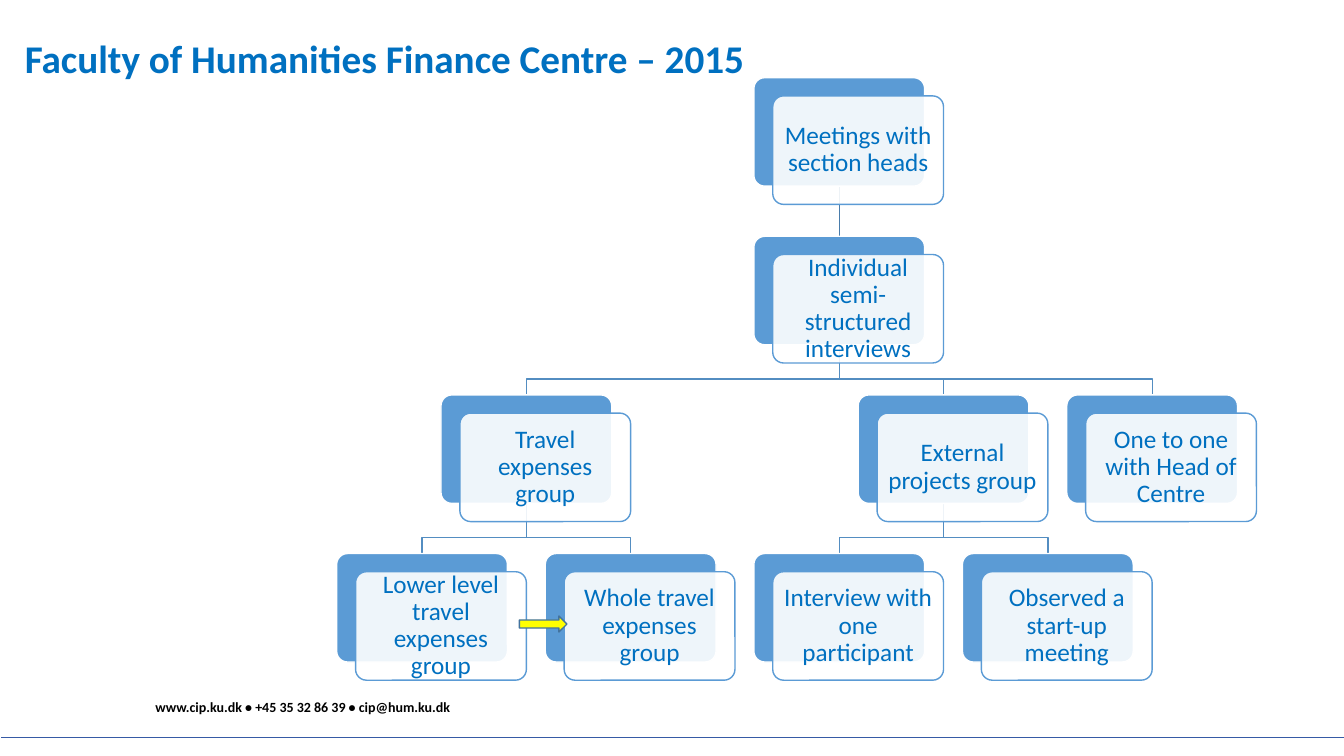
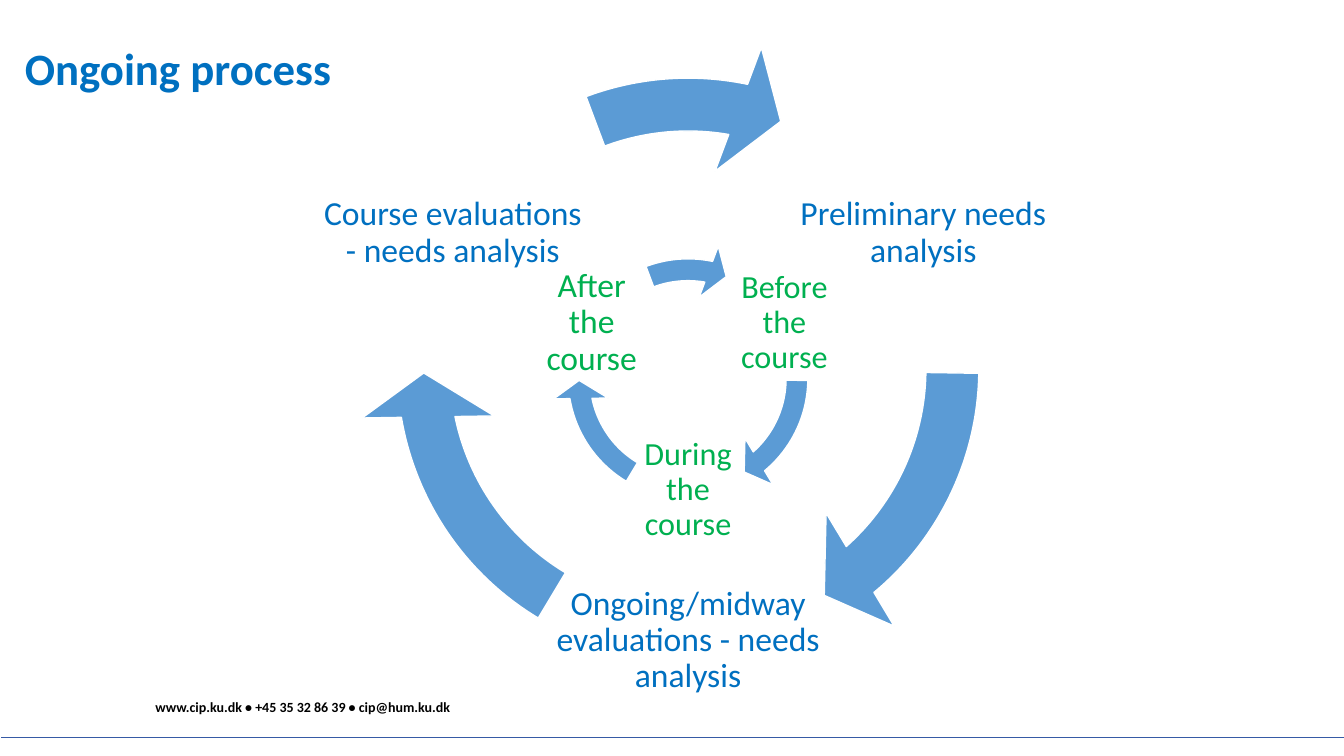
import math

import pptx
import pptx.util
from lxml import etree
from pptx.dml.color import RGBColor
from pptx.enum.shapes import MSO_CONNECTOR, MSO_SHAPE
from pptx.enum.text import MSO_ANCHOR, MSO_AUTO_SIZE, PP_ALIGN
from pptx.oxml.ns import qn

Pt = pptx.util.Pt
FONT = "Calibri"
COLORS = {
    "text": "0070C0", "phase": "00B050", "footer": "000000", "rule": "365AA5",
    "box": "5B9BD5", "white": "FFFFFF", "trunk": "497CAB", "branch": "538DC1",
    "arrow": "FFFF00", "arrow_line": "43739E",
}


def set_text(shape, text, size, color, margin, bold=False,
             align=PP_ALIGN.CENTER, anchor=MSO_ANCHOR.MIDDLE, spacing=0.9):
    tf = shape.text_frame
    tf.text = text
    tf.word_wrap = True
    tf.auto_size = MSO_AUTO_SIZE.NONE
    tf.vertical_anchor = anchor
    tf.margin_left = tf.margin_right = tf.margin_top = tf.margin_bottom = Pt(margin)
    p = tf.paragraphs[0]
    p.alignment = align
    p.line_spacing = spacing
    font = p.runs[0].font
    font.name, font.size, font.bold = FONT, Pt(size), bold
    font.color.rgb = RGBColor.from_string(COLORS[color])


def set_style(shape, line, fill=None, width=1):
    """Set fill and outline, and turn the shadow off; connectors take no fill."""
    shape.line.color.rgb = RGBColor.from_string(COLORS[line])
    shape.line.width = Pt(width)
    if hasattr(shape, "shadow"):
        shape.shadow.inherit = False
    else:
        etree.SubElement(shape._element.spPr, qn("a:effectLst"))
    if fill:
        shape.fill.solid()
        shape.fill.fore_color.rgb = RGBColor.from_string(COLORS[fill])
    elif hasattr(shape, "fill"):
        shape.fill.background()


prs = pptx.Presentation()
prs.slide_width, prs.slide_height = Pt(960), Pt(540)
layout = prs.slide_layouts[5]

# Titles: text, top, height, size
slides = []
for text, top, height, size in [
    ("Faculty of Humanities Finance Centre – 2015", 29.5, 28, 28),
    ("Ongoing process", 28, 45.5, 32),
]:
    s = prs.slides.add_slide(layout)
    title = s.shapes.title
    title.left, title.top, title.width, title.height = Pt(10.5), Pt(top), Pt(648), Pt(height)
    set_text(title, text, size, "text", 7.2, bold=True, align=PP_ALIGN.LEFT)
    slides.append(s)
chart, cycle = slides

# The footer and its rule belong to the layout
rule = chart.shapes.add_connector(MSO_CONNECTOR.STRAIGHT, Pt(1), Pt(527), Pt(960), Pt(527))
set_style(rule, "rule", width=0.75)
footer = chart.shapes.add_textbox(Pt(111), Pt(498), Pt(754), Pt(16))
set_text(footer, "www.cip.ku.dk • +45 35 32 86 39 • cip@hum.ku.dk", 10, "footer", 0,
         bold=True, align=PP_ALIGN.LEFT, anchor=MSO_ANCHOR.TOP, spacing=1.1)
for shape in (rule, footer):
    layout.shapes.element.append(shape._element)

# Slide 1: organisation chart on a grid of half-card columns
LEFT, TOP, COL, ROW = 240.5, 55.5, 74.5, 113.3
CARD_W, CARD_H, SHIFT_X, SHIFT_Y = 122, 77.5, 13.5, 13
cards = [  # text, column, row, index of parent
    ("Meetings with section heads", 4, 0, None),
    ("Individual semi-structured interviews", 4, 1, 0),
    ("Travel expenses group", 1, 2, 1),
    ("External projects group", 5, 2, 1),
    ("One to one with Head of Centre", 7, 2, 1),
    ("Lower level travel expenses group", 0, 3, 2),
    ("Whole travel expenses group", 2, 3, 2),
    ("Interview with one participant", 4, 3, 3),
    ("Observed a start-up meeting", 6, 3, 3),
]

for text, col, row, parent in cards:
    if parent is None:
        continue
    parent_col, parent_row = cards[parent][1:3]
    x1, x2 = [Pt(LEFT + COL * c + CARD_W / 2) for c in (parent_col, col)]
    y1, y2 = Pt(TOP + ROW * parent_row + CARD_H), Pt(TOP + ROW * row)
    if x1 == x2:
        link = chart.shapes.add_connector(MSO_CONNECTOR.STRAIGHT, x1, y1, x2, y2)
        set_style(link, "trunk")
    else:
        bend = y2 - Pt(11.5)
        outline = chart.shapes.build_freeform(x1, y1)
        outline.add_line_segments([(x1, bend), (x2, bend), (x2, y2)], close=False)
        set_style(outline.convert_to_shape(), "branch")

for text, col, row, parent in cards:
    x, y = LEFT + COL * col, TOP + ROW * row
    for dx, dy, fill, line in [(0, 0, "box", "white"), (SHIFT_X, SHIFT_Y, "white", "box")]:
        card = chart.shapes.add_shape(MSO_SHAPE.ROUNDED_RECTANGLE, Pt(x + dx), Pt(y + dy),
                                      Pt(CARD_W), Pt(CARD_H))
        card.adjustments[0] = 0.1
        set_style(card, line, fill)
    tint = card._element.spPr.find(qn("a:solidFill")).find(qn("a:srgbClr"))
    etree.SubElement(tint, qn("a:alpha"), val="90000")
    set_text(card, text, 18, "text", 5)

arrow = chart.shapes.add_shape(MSO_SHAPE.RIGHT_ARROW, Pt(371), Pt(440), Pt(34), Pt(11.5))
set_style(arrow, "arrow_line", "arrow")

# Slide 2: two concentric cycles, each with three labels and three arrows
CENTRE_X = 491.5
ARROW_ENDS = [(29.63, 0.52), (101.71, 72.61), (168.56, 149.68)]
LABEL_ANGLES = [-30, 90, 210]
cycles = [  # centre y, arrow diameter, label radius, label side, colour, labels with sizes
    (270.5, 194.5, 79.5, 82, "phase",
     [("Before the course", 23), ("During the course", 23), ("After the course", 24)]),
    (263.5, 472, 194, 200, "text",
     [("Preliminary needs analysis", 24),
      ("Ongoing/midway evaluations - needs analysis", 24),
      ("Course evaluations - needs analysis", 24)]),
]
for centre_y, diameter, radius, side, color, labels in cycles:
    for (text, size), angle, (head, tail) in zip(labels, LABEL_ANGLES, ARROW_ENDS):
        x = CENTRE_X + radius * math.cos(math.radians(angle)) - side / 2
        y = centre_y + radius * math.sin(math.radians(angle)) - side / 2
        label = cycle.shapes.add_textbox(Pt(x), Pt(y), Pt(side), Pt(side))
        set_text(label, text, size, color, 2.2)
        arrow = cycle.shapes.add_shape(
            MSO_SHAPE.CIRCULAR_ARROW, Pt(CENTRE_X - diameter / 2),
            Pt(centre_y - diameter / 2), Pt(diameter), Pt(diameter))
        for i, value in enumerate([0.08, 5.76, head, tail, 0.1]):
            arrow.adjustments[i] = value
        set_style(arrow, "white", "box")

prs.save("out.pptx")
